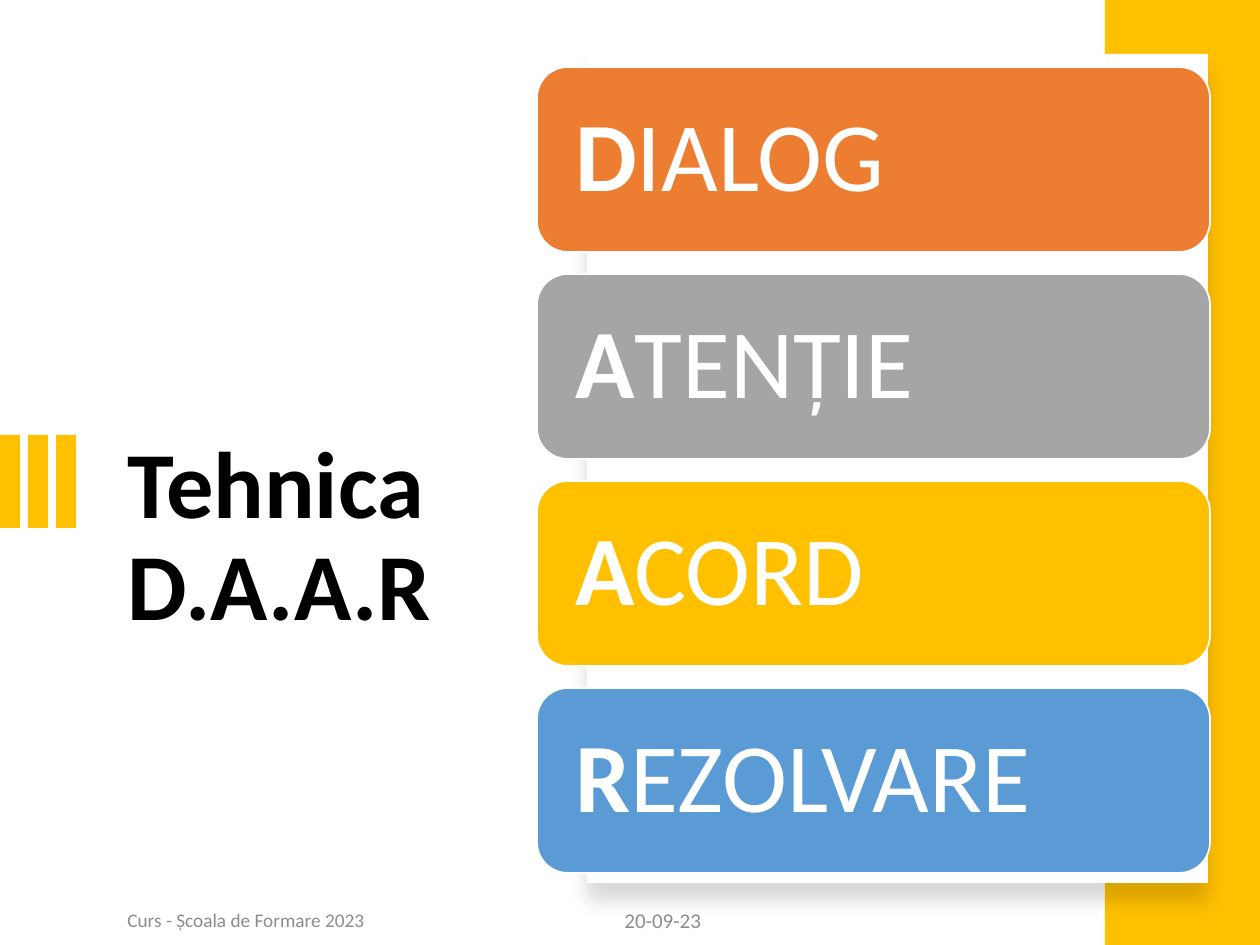
from lxml import etree
from pptx import Presentation
from pptx.dml.color import RGBColor
from pptx.enum import shapes, text
from pptx.oxml.ns import qn
from pptx.util import Emu, Pt

TITLE = "Tehnica D.A.A.R"
STEPS = [
    ("D", "IALOG", "ED7D31"),
    ("A", "TENȚIE", "A5A5A5"),
    ("A", "CORD", "FFC000"),
    ("R", "EZOLVARE", "5B9BD5"),
]
# text, left, width, size
FOOTERS = [
    ("Curs - Școala de Formare 2023", 115, 389, 11),
    ("20-09-23", 612, 284, 12),
]
FONT, GOLD, WHITE = "Calibri", "FFC000", "FFFFFF"


def px(n):
    return Emu(round(n * 914400 / 126))


def box(*sides):
    return [px(n) for n in sides]


def rgb(color):
    return RGBColor.from_string(color)


def style(font, size, color, bold=None):
    font.name, font.size, font.bold = FONT, Pt(size), bold
    font.color.rgb = rgb(color)


def add_block(slide, kind, sides, fill, line=None):
    sp = slide.shapes.add_shape(kind, *box(*sides))
    sp.shadow.inherit = False
    sp.fill.solid()
    sp.fill.fore_color.rgb = rgb(fill)
    if line:
        sp.line.color.rgb = rgb(line)
        sp.line.width = Pt(1)
    else:
        sp.line.fill.background()
    return sp


def add_shadow(sp, alpha, blur, dist, angle):
    effects = sp._element.spPr.find(qn("a:effectLst"))
    shadow = etree.SubElement(
        effects, qn("a:outerShdw"), blurRad=str(Pt(blur)), dist=str(Pt(dist)),
        dir=str(angle * 60000), algn="t", rotWithShape="0")
    color = etree.SubElement(shadow, qn("a:srgbClr"), val="000000")
    etree.SubElement(color, qn("a:alpha"), val=str(alpha * 1000))


prs = Presentation()
prs.slide_width, prs.slide_height = px(1260), px(945)
slide = prs.slides.add_slide(prs.slide_layouts[5])
RECT = shapes.MSO_SHAPE.RECTANGLE
ROUND = shapes.MSO_SHAPE.ROUNDED_RECTANGLE

# Title
title = slide.shapes.title
title.left, title.top, title.width, title.height = box(115, 431, 417, 329)
tf = title.text_frame
tf.text = TITLE
tf.word_wrap = True
tf.auto_size = text.MSO_AUTO_SIZE.NONE
tf.vertical_anchor = text.MSO_ANCHOR.TOP
p = tf.paragraphs[0]
p.alignment = text.PP_ALIGN.LEFT
p.line_spacing = 0.9
style(p.font, 54, "000000", True)

# Accent bars, side band and white panel
for i in range(3):
    add_block(slide, RECT, (28 * i, 435, 20, 93), GOLD)
add_block(slide, RECT, (1105, 0, 155, 945), GOLD)
panel = add_block(slide, RECT, (587, 54, 621, 829), WHITE)
add_shadow(panel, alpha=15, blur=11, dist=10, angle=90)

# Footer and date
for words, left, width, size in FOOTERS:
    tf = slide.shapes.add_textbox(*box(left, 895, width, 50)).text_frame
    tf.word_wrap = True
    tf.vertical_anchor = text.MSO_ANCHOR.MIDDLE
    p = tf.paragraphs[0]
    p.text = words
    p.space_after = Pt(6)
    style(p.font, size, "8C8C8C")

# Step cards
CARD_TOP, CARD_HEIGHT, CARD_PITCH = 67, 185, 207
for i, (initial, rest, fill) in enumerate(STEPS):
    sides = (537, CARD_TOP + i * CARD_PITCH, 673, CARD_HEIGHT)
    tf = add_block(slide, ROUND, sides, fill, WHITE).text_frame
    tf.margin_left = tf.margin_right = tf.margin_top = tf.margin_bottom = px(29)
    tf.vertical_anchor = text.MSO_ANCHOR.MIDDLE
    p = tf.paragraphs[0]
    p.alignment = text.PP_ALIGN.LEFT
    p.line_spacing = 0.9
    for words, bold in ((initial, True), (rest, False)):
        r = p.add_run()
        r.text = words
        style(r.font, 56, WHITE, bold)

prs.save("out.pptx")
